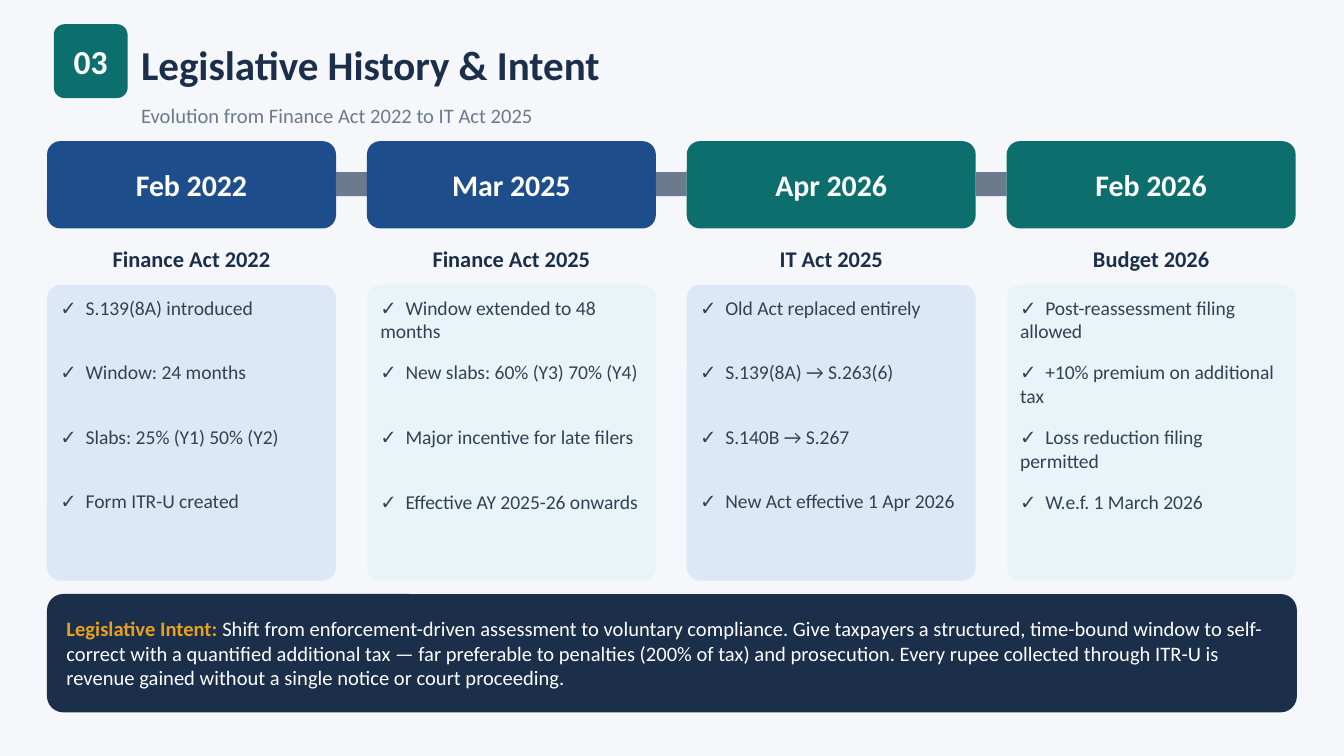
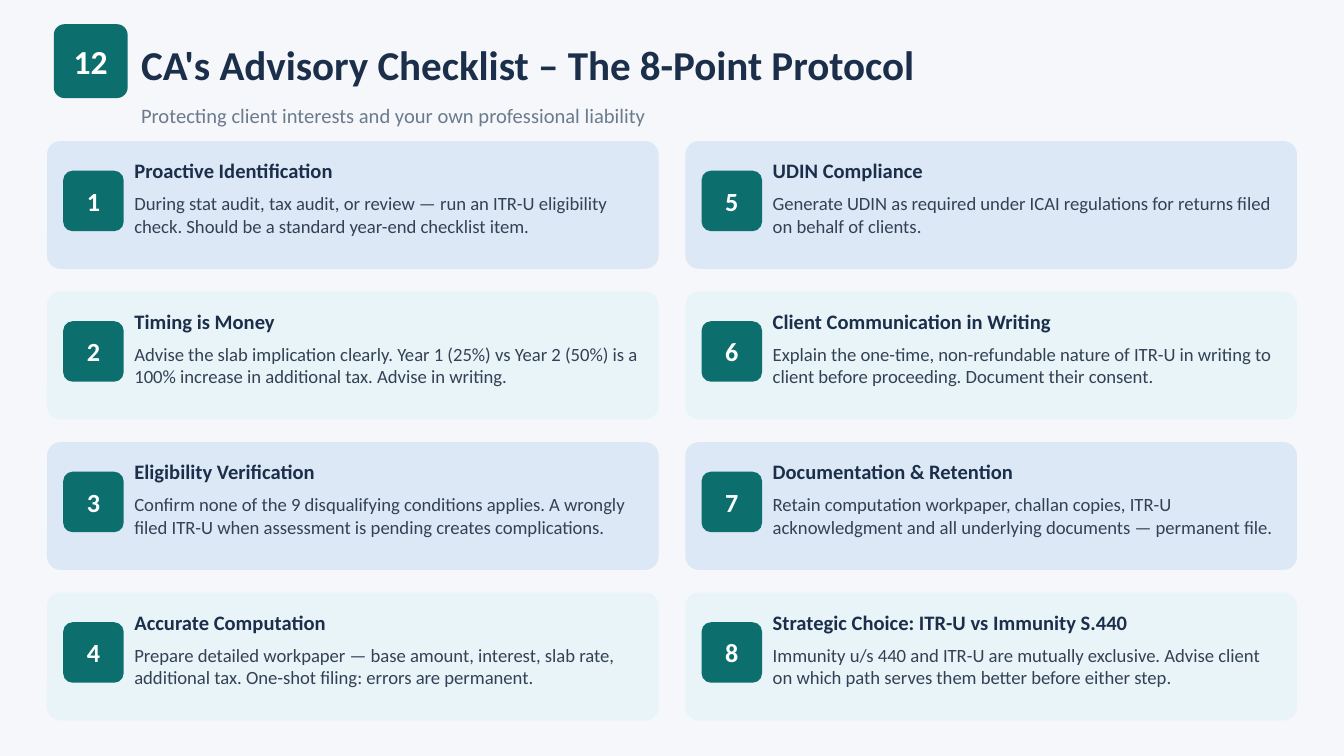
from pptx import Presentation
from pptx.dml.color import RGBColor
from pptx.enum.shapes import MSO_SHAPE as Kind
from pptx.enum.text import MSO_ANCHOR as Anchor, MSO_AUTO_SIZE as Fit, PP_ALIGN as Align
from pptx.oxml import parse_xml
from pptx.oxml.ns import nsdecls
from pptx.util import Emu, Pt

PX = 9144  # 100 px to the inch
FONT = "Calibri"
NAVY, BLUE, TEAL, GOLD = "1B2E4A", "1E4D8C", "0D6E6E", "E8A020"
INK, GREY, WHITE, PAPER = "334155", "6B7A8D", "FFFFFF", "F5F7FA"
TINTS = ["DCE8F5", "E8F4F8"]
hue = RGBColor.from_string


def place(slide, at, fill=None, curve=0, holder=None):
    """Add a filled box or a text box, or move a placeholder to the front."""
    x, y, w, h = [Emu(n * PX) for n in at]
    if holder is not None:
        holder.left, holder.top, holder.width, holder.height = x, y, w, h
        slide.shapes._spTree.append(holder._element)
        return holder
    if fill is None:
        return slide.shapes.add_textbox(x, y, w, h)
    kind = Kind.ROUNDED_RECTANGLE if curve else Kind.RECTANGLE
    box = slide.shapes.add_shape(kind, x, y, w, h)
    if curve:
        box.adjustments[0] = curve / min(at[2:])
    box.shadow.inherit = False
    box.fill.solid()
    box.fill.fore_color.rgb = hue(fill)
    box.line.fill.background()
    return box


def write(box, text, size=11, color=INK, bold=False, align=Align.LEFT,
          anchor=Anchor.MIDDLE, gap=None, track=0):
    """Add a run to the last paragraph, or to a new one set gap points below."""
    frame = box.text_frame
    frame.word_wrap = True
    frame.auto_size = Fit.NONE
    frame.vertical_anchor = anchor
    frame.margin_left = frame.margin_right = 0
    frame.margin_top = frame.margin_bottom = 0
    para = frame.paragraphs[-1] if gap is None else frame.add_paragraph()
    para.alignment = align
    if gap is not None or not para.runs:
        para.space_before = Pt(gap or 0)
    run = para.add_run()
    run.text = text
    run.font.name, run.font.size, run.font.bold = FONT, Pt(size), bold
    run.font.color.rgb = hue(color)
    if track:
        run._r.get_or_add_rPr().set("spc", str(track))
    return para


deck = Presentation()
deck.slide_width, deck.slide_height = Emu(1000 * PX), Emu(1000 * PX * 9 // 16)
back = deck.slide_master.background.fill
back.solid()
back.fore_color.rgb = hue(PAPER)

# Heads: number badge, title and subtitle; layout 4 holds four lists, 5 none
heads = [
    (4, "03", "Legislative History & Intent",
     "Evolution from Finance Act 2022 to IT Act 2025"),
    (5, "12", "CA's Advisory Checklist – The 8-Point Protocol",
     "Protecting client interests and your own professional liability"),
]
slides = []
for layout, number, title, sub in heads:
    slide = deck.slides.add_slide(deck.slide_layouts[layout])
    badge = place(slide, (40, 18, 55, 55), TEAL, 8)
    write(badge, number, size=18, color=WHITE, bold=True, align=Align.CENTER)
    head = place(slide, (105, 20, 860, 55), holder=slide.shapes.title)
    write(head, title, size=22, color=NAVY, bold=True)
    write(place(slide, (105, 72, 860, 28)), sub, color=GREY)
    slides.append(slide)
history, protocol = slides

# Timeline: each point is paired with the number of lines it takes
acts = [
    ("Feb 2022", "Finance Act 2022", BLUE, [
        ("S.139(8A) introduced", 1),
        ("Window: 24 months", 1),
        ("Slabs: 25% (Y1) 50% (Y2)", 1),
        ("Form ITR-U created", 1)]),
    ("Mar 2025", "Finance Act 2025", BLUE, [
        ("Window extended to 48 months", 2),
        ("New slabs: 60% (Y3) 70% (Y4)", 1),
        ("Major incentive for late filers", 1),
        ("Effective AY 2025-26 onwards", 1)]),
    ("Apr 2026", "IT Act 2025", TEAL, [
        ("Old Act replaced entirely", 1),
        ("S.139(8A) → S.263(6)", 1),
        ("S.140B → S.267", 1),
        ("New Act effective 1 Apr 2026", 1)]),
    ("Feb 2026", "Budget 2026", TEAL, [
        ("Post-reassessment filing allowed", 2),
        ("+10% premium on additional tax", 2),
        ("Loss reduction filing permitted", 2),
        ("W.e.f. 1 March 2026", 1)]),
]
WIDE, STEP = 215, 238
PITCH, LINE = 34.56, 12.55  # points from item to item, and per line
for i, (date, act, fill, points) in enumerate(acts):
    x = 35 + i * STEP
    card = place(history, (x, 105, WIDE, 65), fill, 10)
    write(card, date, size=16, color=WHITE, bold=True, align=Align.CENTER)
    if i < len(acts) - 1:
        place(history, (x + WIDE, 128, STEP - WIDE, 18), GREY)
    name = place(history, (x, 175, WIDE, 35))
    write(name, act, size=12, color=NAVY, bold=True, align=Align.CENTER)
    place(history, (x, 212, WIDE, 220), TINTS[i % 2], 10)
    body = place(history, (x + 10, 220, WIDE - 20, 200),
                 holder=history.placeholders[i + 1])
    gap = None
    for point, lines in points:
        para = write(body, "✓ ", size=10.5, anchor=Anchor.TOP, gap=gap, track=120)
        props = para._p.get_or_add_pPr()
        props.set("marL", "0")
        props.set("indent", "0")
        props.append(parse_xml(f"<a:buNone {nsdecls('a')}/>"))
        write(body, point, size=10.5, anchor=Anchor.TOP)
        gap = round(PITCH - lines * LINE, 2)

band = place(history, (35, 442, 930, 88), NAVY, 12)
write(band, "Legislative Intent: ", color=GOLD, bold=True)
write(band, "Shift from enforcement-driven assessment to voluntary compliance. "
      "Give taxpayers a structured, time-bound window to self-correct with a "
      "quantified additional tax — far preferable to penalties (200% of tax) and "
      "prosecution. Every rupee collected through ITR-U is revenue gained without "
      "a single notice or court proceeding.", color=WHITE)
band.text_frame.margin_left = Emu(11 * PX)

# Checklist: two columns of four cards, filled downwards
steps = [
    ("Proactive Identification",
     "During stat audit, tax audit, or review — run an ITR-U eligibility check. "
     "Should be a standard year-end checklist item."),
    ("Timing is Money",
     "Advise the slab implication clearly. Year 1 (25%) vs Year 2 (50%) is a "
     "100% increase in additional tax. Advise in writing."),
    ("Eligibility Verification",
     "Confirm none of the 9 disqualifying conditions applies. A wrongly filed "
     "ITR-U when assessment is pending creates complications."),
    ("Accurate Computation",
     "Prepare detailed workpaper — base amount, interest, slab rate, additional "
     "tax. One-shot filing: errors are permanent."),
    ("UDIN Compliance",
     "Generate UDIN as required under ICAI regulations for returns filed on "
     "behalf of clients."),
    ("Client Communication in Writing",
     "Explain the one-time, non-refundable nature of ITR-U in writing to client "
     "before proceeding. Document their consent."),
    ("Documentation & Retention",
     "Retain computation workpaper, challan copies, ITR-U acknowledgment and all "
     "underlying documents — permanent file."),
    ("Strategic Choice: ITR-U vs Immunity S.440",
     "Immunity u/s 440 and ITR-U are mutually exclusive. Advise client on which "
     "path serves them better before either step."),
]
for i, (name, advice) in enumerate(steps):
    col, row = divmod(i, 4)
    x, y = 35 + col * 475, 105 + row * 112
    place(protocol, (x, y, 455, 95), TINTS[row % 2], 10)
    badge = place(protocol, (x + 12, y + 22, 45, 45), TEAL, 7)
    write(badge, str(i + 1), size=14, color=WHITE, bold=True, align=Align.CENTER)
    write(place(protocol, (x + 65, y + 8, 377, 28)), name, color=NAVY, bold=True)
    write(place(protocol, (x + 65, y + 38, 377, 52)), advice, size=10,
          anchor=Anchor.TOP)

deck.save("out.pptx")
